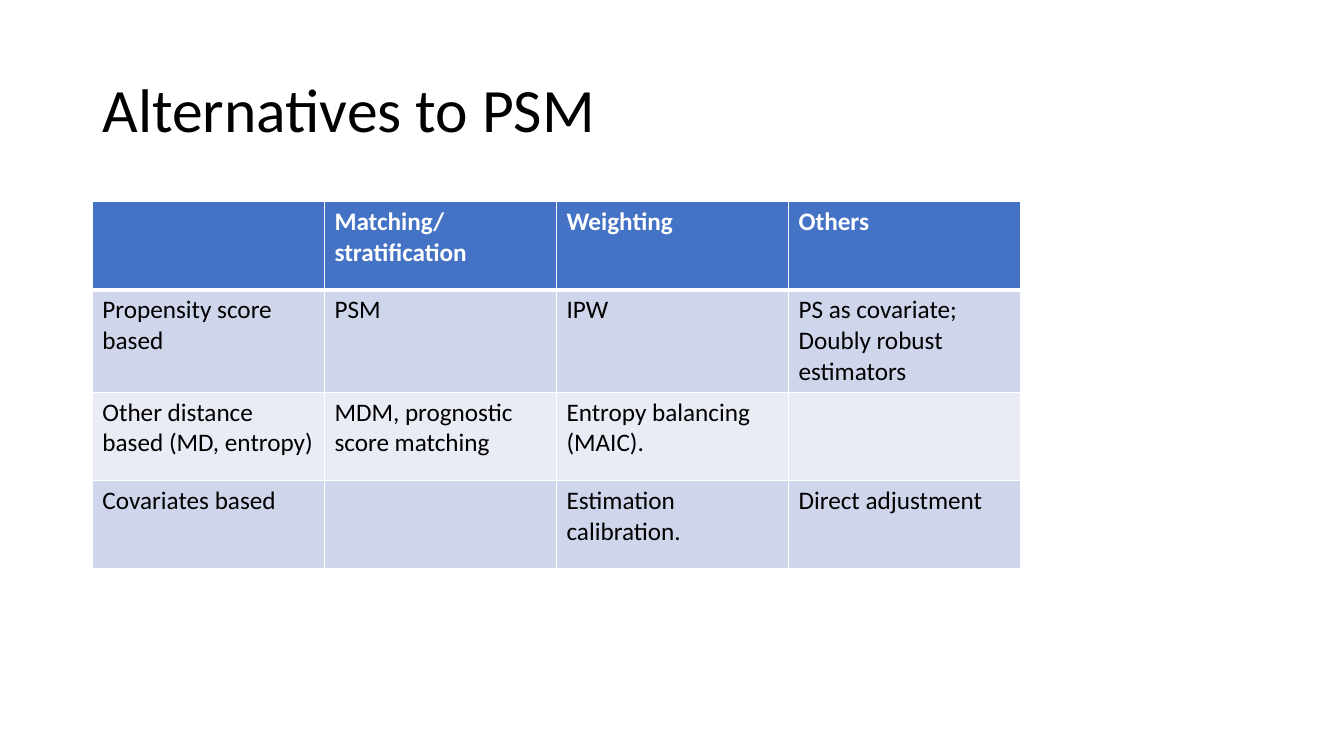
from dataclasses import dataclass

from lxml import etree
from pptx import Presentation
from pptx.dml.color import RGBColor
from pptx.enum.text import MSO_ANCHOR, MSO_AUTO_SIZE, PP_ALIGN
from pptx.oxml.ns import qn
from pptx.util import Emu, Pt

LEFT = PP_ALIGN.LEFT
MIDDLE = MSO_ANCHOR.MIDDLE
NO_AUTOFIT = MSO_AUTO_SIZE.NONE
TITLE_ONLY = 5
EMU_PER_PX = 9525


@dataclass(frozen=True)
class Theme:
    font: str = "Calibri"
    title_size: int = 44
    cell_size: int = 18
    ink: str = "000000"
    white: str = "FFFFFF"
    header: str = "4472C4"
    bands: tuple = ("CFD5EA", "E9EBF5")
    thin: int = 1
    thick: int = 3


THEME = Theme()

METHODS = [
    ["", "Matching/stratification", "Weighting", "Others"],
    ["Propensity score based", "PSM", "IPW",
     "PS as covariate; Doubly robust estimators"],
    ["Other distance based (MD, entropy)", "MDM, prognostic score matching",
     "Entropy balancing (MAIC).", ""],
    ["Covariates based", "", "Estimation calibration.", "Direct adjustment"],
]


def px(length):
    return Emu(length * EMU_PER_PX)


def add_span(para, text, size, color, bold=False):
    span = para.add_run()
    span.text = text
    span.font.name = THEME.font
    span.font.size = Pt(size)
    span.font.bold = bold
    span.font.color.rgb = RGBColor.from_string(color)


def add_title(page, text, left, top, width, height):
    title = page.shapes.title
    title.left, title.top = px(left), px(top)
    title.width, title.height = px(width), px(height)
    frame = title.text_frame
    frame.auto_size = NO_AUTOFIT
    frame.word_wrap = True
    frame.vertical_anchor = MIDDLE
    para = frame.paragraphs[0]
    para.alignment = LEFT
    para.line_spacing = 0.9
    add_span(para, text, THEME.title_size, THEME.ink)


def set_borders(cell, widths):
    """Draw white borders; widths are points for left, right, top, bottom."""
    properties = cell._tc.get_or_add_tcPr()
    for index, (side, width) in enumerate(zip("LRTB", widths)):
        line = etree.Element(qn(f"a:ln{side}"), w=str(Pt(width)))
        fill = etree.SubElement(line, qn("a:solidFill"))
        etree.SubElement(fill, qn("a:srgbClr"), val=THEME.white)
        properties.insert(index, line)


def format_cell(cell, text, row):
    is_header = row == 0
    background = THEME.header if is_header else THEME.bands[(row - 1) % 2]
    cell.fill.solid()
    cell.fill.fore_color.rgb = RGBColor.from_string(background)
    top = THEME.thick if row == 1 else THEME.thin
    bottom = THEME.thick if is_header else THEME.thin
    set_borders(cell, (THEME.thin, THEME.thin, top, bottom))
    if text:
        color = THEME.white if is_header else THEME.ink
        add_span(cell.text_frame.paragraphs[0], text, THEME.cell_size, color,
                 bold=is_header)


def add_table(page, rows, left, top, column_width, row_height):
    row_count, column_count = len(rows), len(rows[0])
    table = page.shapes.add_table(
        row_count, column_count, px(left), px(top),
        px(column_width * column_count), px(row_height * row_count)).table
    for row, texts in enumerate(rows):
        for column, text in enumerate(texts):
            format_cell(table.cell(row, column), text, row)


def main():
    deck = Presentation()
    deck.slide_width, deck.slide_height = px(1280), px(720)
    page = deck.slides.add_slide(deck.slide_layouts[TITLE_ONLY])
    add_title(page, "Alternatives to PSM", 88, 38, 1104, 139)
    add_table(page, METHODS, left=88, top=192, column_width=221, row_height=84)
    deck.save("out.pptx")


if __name__ == "__main__":
    main()
